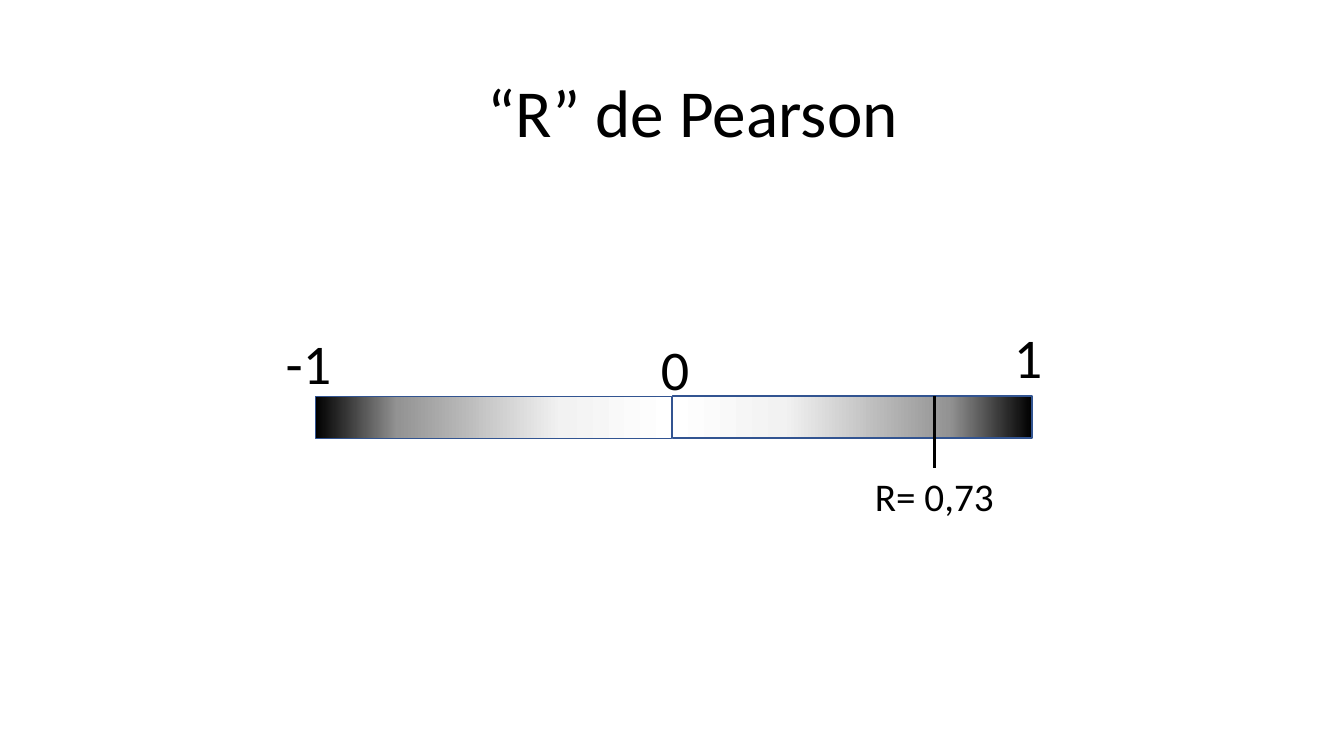
from copy import deepcopy
from dataclasses import dataclass

from lxml import etree
from pptx import Presentation
from pptx.dml.color import RGBColor
from pptx.enum import shapes, text
from pptx.oxml import ns
from pptx.util import Pt

HUES = {"ink": "000000", "edge": "325491", "dark": "939393",
        "pale": "F2F2F2", "white": "FFFFFF"}
STOPS = [(0, "ink"), (0.23, "dark"), (0.69, "pale"), (1, "white")]
BAR_TOP, BAR_HIGH = 283, 30


@dataclass
class Half:
    left: float
    wide: float
    turn: int


@dataclass
class Label:
    words: str
    left: float
    top: float
    wide: float
    high: float
    size: int


HALVES = [Half(480.2, 257, 0), Half(225.5, 254.3, 180)]
LABELS = [
    Label("0", 465, 235.4, 29.5, 55.4, 40),
    Label("1", 710.6, 226.8, 47.5, 55.4, 40),
    Label("-1", 196.6, 231.1, 47.5, 55.4, 40),
    Label("R= 0,73", 566.6, 334, 201.6, 41, 28),
    Label("“R” de Pearson", 337.7, 46.8, 314.6, 65.5, 48),
]


def hue(name: str) -> RGBColor:
    return RGBColor.from_string(HUES[name])


def shade(fill) -> None:
    """Fill with the scale's gradient, darkest at the far end."""
    fill.gradient()
    fill.gradient_angle = 180
    stops = fill._xPr.find(".//" + ns.qn("a:gsLst"))
    for _ in range(len(STOPS) - len(stops)):
        stops.append(deepcopy(stops[0]))
    for stop, (place, name) in zip(fill.gradient_stops, STOPS):
        stop.position = place
        stop.color.rgb = hue(name)


def add_half(slide, half: Half) -> None:
    bar = slide.shapes.add_shape(
        shapes.MSO_SHAPE.RECTANGLE, Pt(half.left), Pt(BAR_TOP),
        Pt(half.wide), Pt(BAR_HIGH))
    bar.rotation = half.turn
    bar.shadow.inherit = False
    shade(bar.fill)
    bar.line.color.rgb = hue("edge")
    bar.line.width = Pt(1)


def add_label(slide, label: Label) -> None:
    box = slide.shapes.add_textbox(
        Pt(label.left), Pt(label.top), Pt(label.wide), Pt(label.high))
    frame = box.text_frame
    frame.word_wrap = True
    frame.auto_size = text.MSO_AUTO_SIZE.SHAPE_TO_FIT_TEXT
    frame.text = label.words
    para = frame.paragraphs[0]
    para.alignment = text.PP_ALIGN.CENTER
    font = para.runs[0].font
    font.name = "Calibri"
    font.size = Pt(label.size)
    font.color.rgb = hue("ink")


def add_mark(slide, left: float, top: float, end: float) -> None:
    """Draw the upright line that marks a value on the scale."""
    mark = slide.shapes.add_connector(
        shapes.MSO_CONNECTOR.STRAIGHT, Pt(left), Pt(top), Pt(left), Pt(end))
    mark.line.color.rgb = hue("ink")
    mark.line.width = Pt(2)
    etree.SubElement(mark._element.spPr, ns.qn("a:effectLst"))


def main() -> None:
    deck = Presentation()
    deck.slide_width, deck.slide_height = Pt(960), Pt(540)
    slide = deck.slides.add_slide(deck.slide_layouts[6])
    for half in HALVES:
        add_half(slide, half)
    add_mark(slide, 667.4, BAR_TOP, 334)
    for label in LABELS:
        add_label(slide, label)
    deck.save("out.pptx")


if __name__ == "__main__":
    main()
